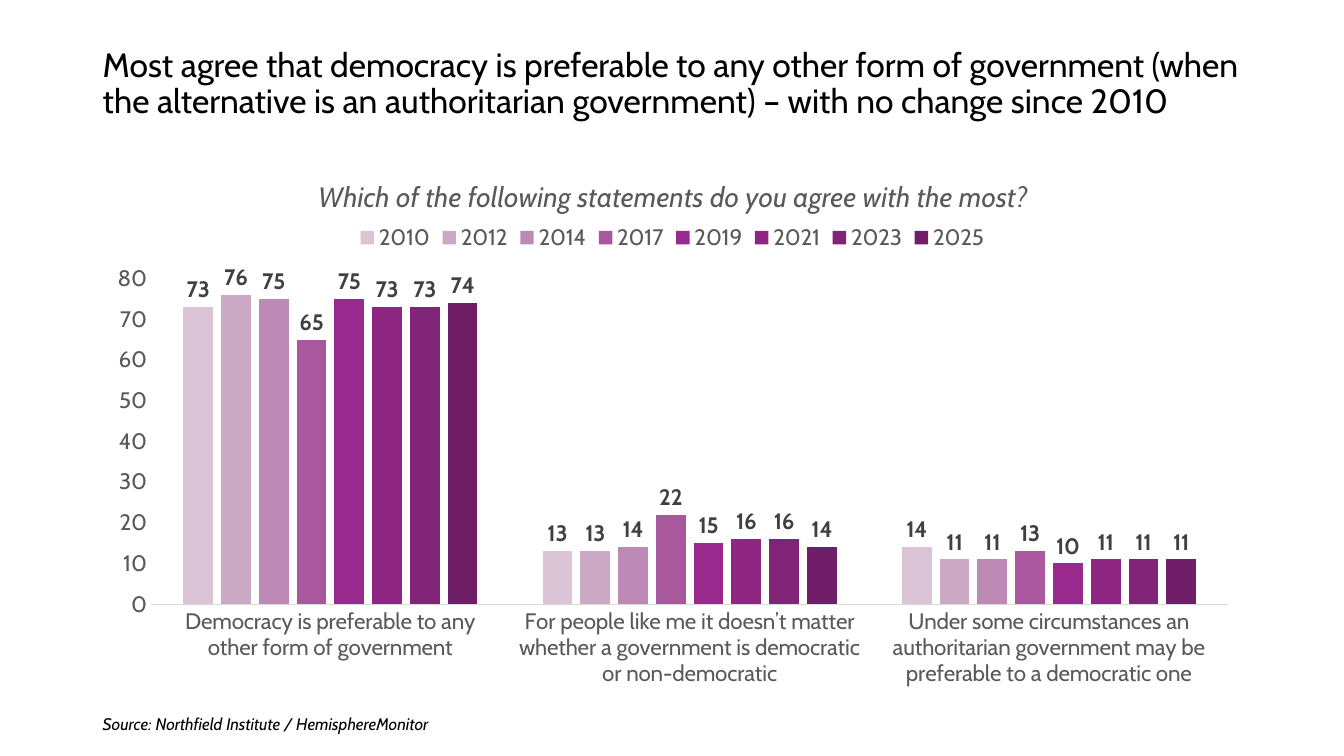
import pptx
import pptx.chart.data
import pptx.dml.color
import pptx.enum.chart
import pptx.enum.text
import pptx.oxml
import pptx.oxml.ns
import pptx.util

Cm = pptx.util.Cm
FACE = "Cabin"


def style(font, size, color, bold=False, italic=False):
    font.name = FACE
    font.size = pptx.util.Pt(size)
    font.bold = bold
    font.italic = italic
    font.color.rgb = pptx.dml.color.RGBColor.from_string(color)


def place(part, index, **box):
    """Give a chart part a fixed place, in fractions of the chart."""
    for old in part.xpath("c:layout"):
        part.remove(old)
    modes = "".join(f'<c:{key}Mode val="edge"/>' for key in "xy")
    sizes = "".join(f'<c:{key} val="{val}"/>' for key, val in box.items())
    inner = '<c:layoutTarget val="inner"/>' if index == 0 else ""
    part.insert(index, pptx.oxml.parse_xml(
        f'<c:layout {pptx.oxml.ns.nsdecls("c")}><c:manualLayout>'
        f"{inner}{modes}{sizes}</c:manualLayout></c:layout>"))


# Slide
deck = pptx.Presentation()
deck.slide_width = Cm(33.87)
deck.slide_height = Cm(19.05)
slide = deck.slides.add_slide(deck.slide_layouts[6])

# Heading and source line
LEFT = Cm(2.34)
HEAD = ("Most agree that democracy is preferable to any other form of government "
        "(when the alternative is an authoritarian government) – with no change since 2010")
SOURCE = "Source: Northfield Institute / HemisphereMonitor"
for text, top, width, height, size, slant in (
        (HEAD, 0.74, 30.33, 2.77, 24, False),
        (SOURCE, 17.86, 12.24, 0.76, 12, True)):
    frame = slide.shapes.add_textbox(LEFT, Cm(top), Cm(width), Cm(height)).text_frame
    frame.word_wrap = True
    frame.vertical_anchor = pptx.enum.text.MSO_ANCHOR.MIDDLE
    para = frame.paragraphs[0]
    para.line_spacing = 1.0 if slant else 0.9
    run = para.add_run()
    run.text = text
    style(run.font, size, "000000", italic=slant)

# Chart data: year, bar colour, share for each statement
YEARS = (
    ("2010", "DAC4D6", (73, 13, 14)),
    ("2012", "CBA9C5", (76, 13, 11)),
    ("2014", "BC8AB4", (75, 14, 11)),
    ("2017", "A9589E", (65, 22, 13)),
    ("2019", "9A298E", (75, 15, 10)),
    ("2021", "8E2682", (73, 16, 11)),
    ("2023", "812377", (73, 16, 11)),
    ("2025", "711E68", (74, 14, 11)),
)
data = pptx.chart.data.CategoryChartData(number_format="0")
data.categories = (
    "Democracy is preferable to any other form of government",
    "For people like me it doesn’t matter whether a government is democratic or non-democratic",
    "Under some circumstances an authoritarian government may be preferable to a democratic one",
)
for year, color, shares in YEARS:
    data.add_series(year, shares)
chart = slide.shapes.add_chart(
    pptx.enum.chart.XL_CHART_TYPE.COLUMN_CLUSTERED,
    LEFT, Cm(3.78), Cm(29.21), Cm(13.79), data).chart
style(chart.font, 16, "000000")

# Bars and their labels
plot = chart.plots[0]
plot.gap_width = 219
plot.overlap = -27
plot.vary_by_categories = False
for bars, (year, color, shares) in zip(plot.series, YEARS):
    bars.format.fill.solid()
    bars.format.fill.fore_color.rgb = pptx.dml.color.RGBColor.from_string(color)
    labels = bars.data_labels
    labels.show_value = True
    labels.position = pptx.enum.chart.XL_LABEL_POSITION.OUTSIDE_END
    style(labels.font, 16, "404040", bold=True)

# Axes
for axis in (chart.category_axis, chart.value_axis):
    axis.has_major_gridlines = False
    axis.major_tick_mark = pptx.enum.chart.XL_TICK_MARK.NONE
    axis.minor_tick_mark = pptx.enum.chart.XL_TICK_MARK.NONE
    style(axis.tick_labels.font, 16, "595959")
base = chart.category_axis.format.line
base.color.rgb = pptx.dml.color.RGBColor.from_string("D9D9D9")
base.width = pptx.util.Pt(0.75)
scale = chart.value_axis
scale.format.line.fill.background()
scale.minimum_scale = 0
scale.maximum_scale = 80
scale.major_unit = 10

# Chart title and legend
run = chart.chart_title.text_frame.paragraphs[0].add_run()
run.text = "Which of the following statements do you agree with the most?"
style(run.font, 20, "595959", italic=True)
chart.has_legend = True
chart.legend.position = pptx.enum.chart.XL_LEGEND_POSITION.TOP
chart.legend.include_in_layout = False
style(chart.legend.font, 16, "595959")

# Places inside the chart
root = chart.element
place(root.xpath("c:chart/c:title")[0], 1, x=0.19, y=0.04)
place(root.xpath("c:chart/c:legend")[0], 1, x=0.22, y=0.13, w=0.56, h=0.06)
place(root.xpath("c:chart/c:plotArea")[0], 0, x=0.05, y=0.235, w=0.93, h=0.595)

deck.save("out.pptx")
